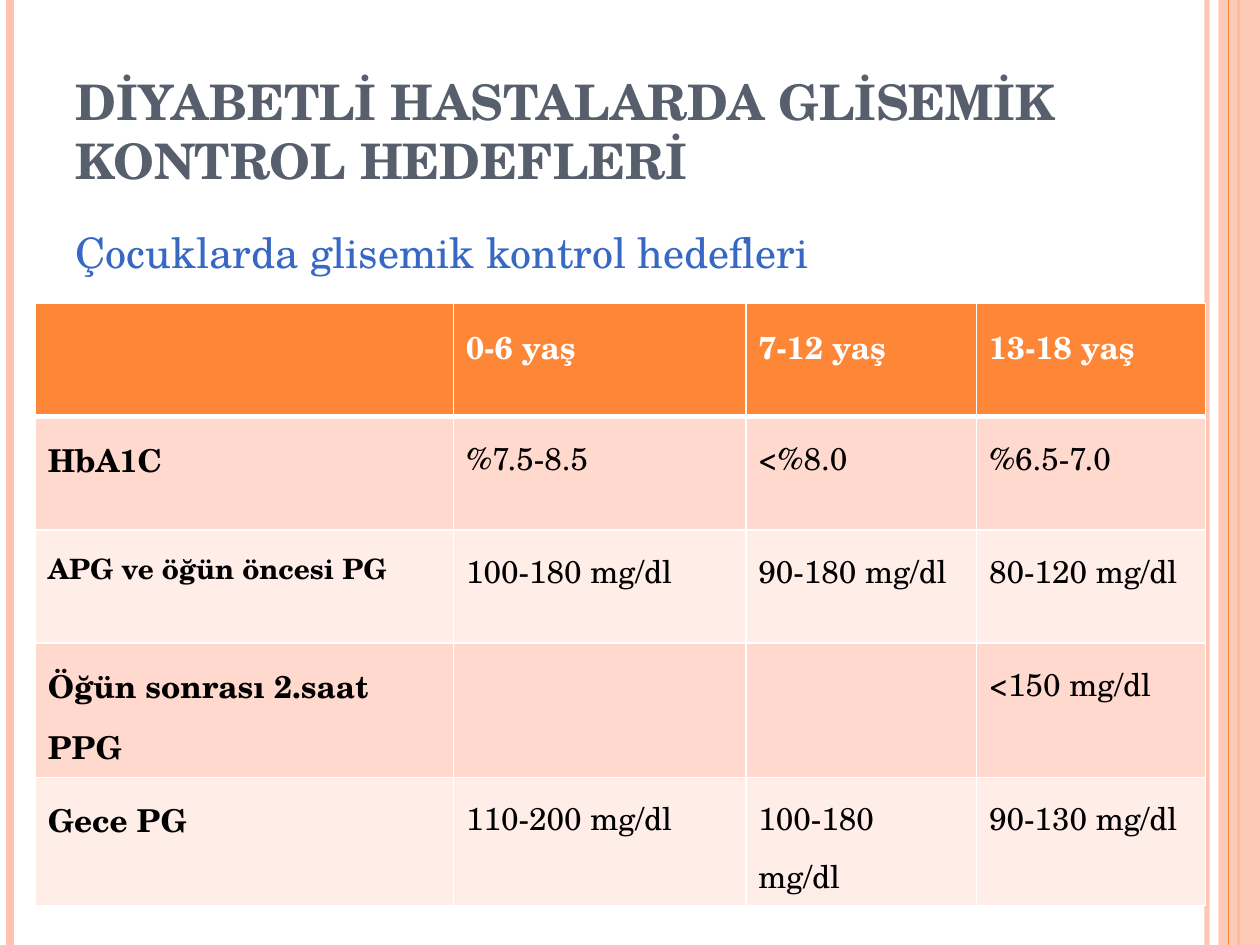
from lxml.etree import SubElement as Sub
from pptx import Presentation as Deck
from pptx.dml.color import RGBColor
from pptx.enum.shapes import MSO_CONNECTOR as Link, MSO_SHAPE as Shape
from pptx.enum.text import MSO_ANCHOR as Anchor, MSO_AUTO_SIZE as Fit, PP_ALIGN as Align
from pptx.oxml.ns import qn
from pptx.util import Inches, Pt

FONT = "TeX Gyre Schola"
ORANGE, PEACH, WHITE, BLACK = "FE8637", "FEC3AE", "FFFFFF", "000000"
BANDS = ["FFD9CE", "FFEDE8"]
WIDTHS = [3.32, 2.32, 1.83, 1.82]
ROWS = [
    ["", "0-6 yaş", "7-12 yaş", "13-18 yaş"],
    ["HbA1C", "%7.5-8.5", "<%8.0", "%6.5-7.0"],
    ["APG ve öğün öncesi PG", "100-180 mg/dl", "90-180 mg/dl", "80-120 mg/dl"],
    ["Öğün sonrası 2.saat PPG", "", "", "<150 mg/dl"],
    ["Gece PG", "110-200 mg/dl", "100-180 mg/dl", "90-130 mg/dl"],
]


def paint(fill, color, alpha=100):
    """Give a fill a solid colour, with opacity in percent."""
    fill.solid()
    fill.fore_color.rgb = RGBColor.from_string(color)
    if alpha < 100:
        node = fill._xPr.find(".//" + qn("a:srgbClr"))
        Sub(node, qn("a:alpha"), val=str(alpha * 1000))


def write(frame, text, size=18, color=BLACK, bold=False, space=1.0, before=0):
    """Write one left-aligned paragraph into a text frame."""
    para = frame.paragraphs[0]
    para.alignment = Align.LEFT
    para.line_spacing = space
    para.space_before = Pt(before)
    run = para.add_run()
    run.text = text
    run.font.name = FONT
    run.font.size = Pt(size)
    run.font.bold = bold
    paint(run.font.fill, color)


def place(shape, box):
    """Move a shape to a box given in inches."""
    shape.left, shape.top, shape.width, shape.height = map(Inches, box)


def rule(slide, x, high, width, color, alpha=100):
    """Draw a vertical line down from the top edge."""
    line = slide.shapes.add_connector(
        Link.STRAIGHT, Inches(x), 0, Inches(x), Inches(high))
    paint(line.line.fill, color, alpha)
    line.line.width = Pt(width)
    Sub(line._element.spPr, qn("a:effectLst"))


def frame_page(slide, box):
    """Draw the side stripes at the edges of the page box."""
    left, top, wide, high = box
    right = left + wide
    rule(slide, right - 0.42, high, 3, PEACH, 93)
    rule(slide, left + 0.08, high, 4.5, PEACH)
    rule(slide, right - 0.17, high, 1.5, ORANGE)
    band = slide.shapes.add_shape(
        Shape.RECTANGLE, *map(Inches, (right - 0.33, top, 0.33, high)))
    band.shadow.inherit = False
    paint(band.fill, PEACH, 87)
    band.line.fill.background()
    rule(slide, right - 0.25, high, 0.75, ORANGE)


def add_title(slide, box):
    """Set the heading in the title placeholder."""
    title = slide.shapes.title
    place(title, box)
    frame = title.text_frame
    frame.auto_size = Fit.NONE
    frame.vertical_anchor = Anchor.BOTTOM
    write(frame, "DİYABETLİ HASTALARDA GLİSEMİK KONTROL HEDEFLERİ",
          size=28, color="575F6D", bold=True)


def add_lead(slide, box):
    """Set the lead line in the body placeholder, without a bullet."""
    body = slide.placeholders[1]
    place(body, box)
    frame = body.text_frame
    frame.auto_size = Fit.NONE
    write(frame, "Çocuklarda glisemik kontrol hedefleri",
          size=24, color="3668C4", before=6)
    props = frame.paragraphs[0]._p.get_or_add_pPr()
    props.set("marL", "0")
    props.set("indent", "0")
    Sub(props, qn("a:buNone"))


def edge(cell, head):
    """Draw white borders, with a thick one below the header."""
    props = cell._tc.get_or_add_tcPr()
    for spot, side in enumerate(["lnL", "lnR", "lnT", "lnB"]):
        width = Pt(3 if head and side == "lnB" else 1)
        line = props.makeelement(qn("a:" + side), {"w": str(width)})
        fill = Sub(line, qn("a:solidFill"))
        Sub(fill, qn("a:srgbClr"), val=WHITE)
        props.insert(spot, line)


def add_goals(slide, box):
    """Build the table of goals by age group."""
    table = slide.shapes.add_table(
        len(ROWS), len(WIDTHS), *map(Inches, box)).table
    for col, width in zip(table.columns, WIDTHS):
        col.width = Inches(width)
    for r, row in enumerate(ROWS):
        head = r == 0
        for c, text in enumerate(row):
            cell = table.cell(r, c)
            paint(cell.fill, ORANGE if head else BANDS[(r - 1) % 2])
            edge(cell, head)
            if text:
                write(cell.text_frame, text, space=1.25,
                      size=16 if (r, c) == (2, 0) else 18,
                      color=WHITE if head else BLACK,
                      bold=head or c == 0)


def main():
    """Build the slide and save it."""
    deck = Deck()
    deck.slide_width, deck.slide_height = Inches(10), Inches(7.5)
    slide = deck.slides.add_slide(deck.slide_layouts[1])
    frame_page(slide, (0, 0, 10, 7.5))
    add_title(slide, (0.5, 0.3, 8.17, 1.25))
    add_lead(slide, (0.5, 1.75, 8.17, 5.33))
    add_goals(slide, (0.28, 2.41, sum(WIDTHS), 4.49))
    deck.save("out.pptx")


if __name__ == "__main__":
    main()
